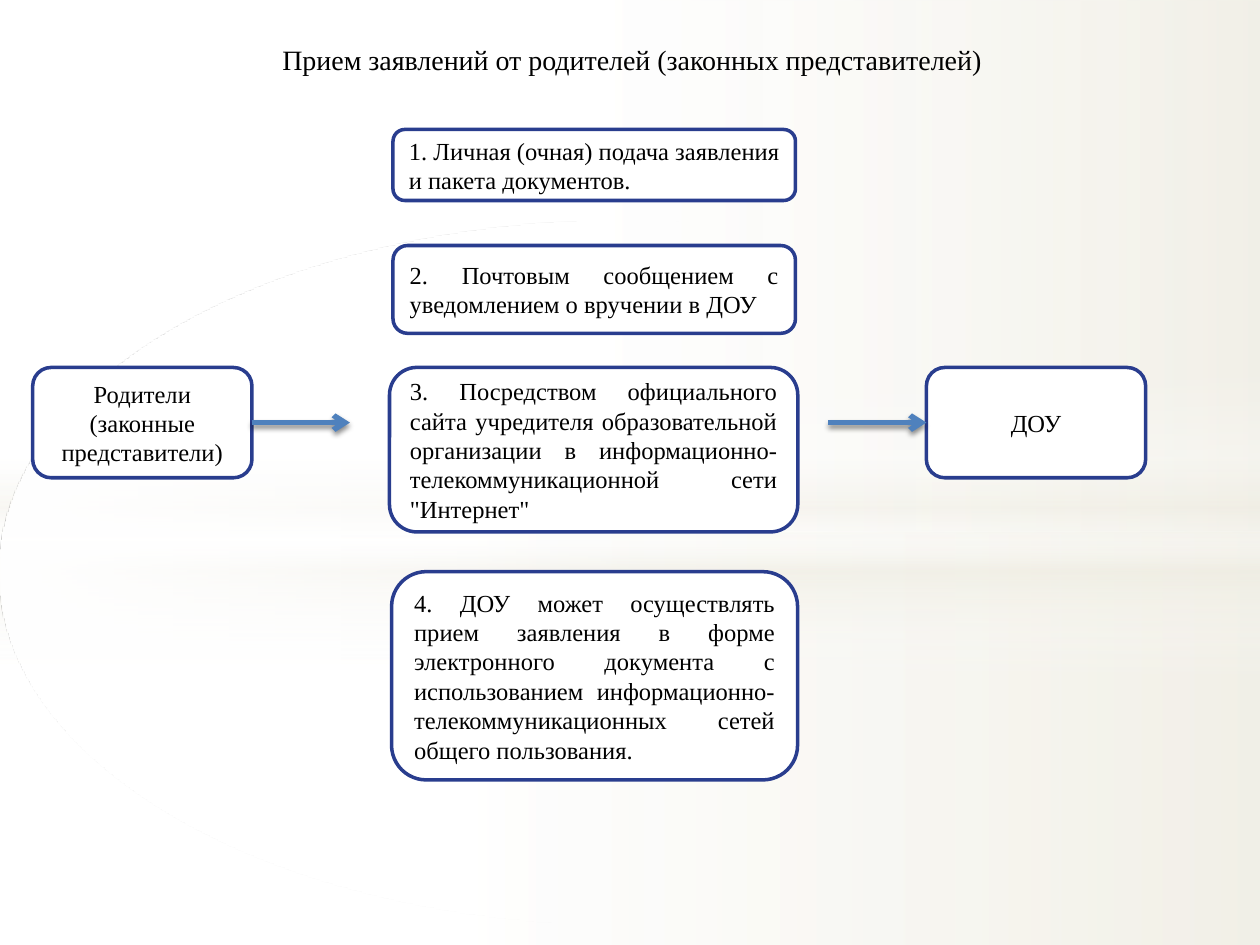
from lxml import etree
from pptx import Presentation
from pptx.dml.color import RGBColor
from pptx.enum.shapes import MSO_CONNECTOR, MSO_SHAPE
from pptx.enum.text import MSO_ANCHOR, PP_ALIGN
from pptx.oxml import parse_xml
from pptx.oxml.ns import nsdecls, qn
from pptx.util import Pt

RECTANGLE, OVAL, ROUNDED = MSO_SHAPE.RECTANGLE, MSO_SHAPE.OVAL, MSO_SHAPE.ROUNDED_RECTANGLE
STRAIGHT = MSO_CONNECTOR.STRAIGHT
MIDDLE = MSO_ANCHOR.MIDDLE
CENTER, JUSTIFY = PP_ALIGN.CENTER, PP_ALIGN.JUSTIFY
LEFT_SIDE, RIGHT_SIDE = 1, 3
FONT = "Times New Roman"
COLORS = {"white": "FFFFFF", "cream": "EEECE1", "border": "293D8E",
          "arrow": "4F81BD", "text": "000000"}


def color(name):
    return RGBColor.from_string(COLORS[name])


def write_text(shape, lines, size, alignment):
    frame = shape.text_frame
    frame.word_wrap = True
    for index, line in enumerate(lines):
        paragraph = frame.add_paragraph() if index else frame.paragraphs[0]
        paragraph.alignment = alignment
        run = paragraph.add_run()
        run.text = line
        for name, value in {"name": FONT, "size": Pt(size)}.items():
            setattr(run.font, name, value)
        run.font.color.rgb = color("text")


presentation = Presentation()
presentation.slide_width, presentation.slide_height = Pt(720), Pt(540)
slide = presentation.slides.add_slide(presentation.slide_layouts[6])
shapes = slide.shapes
slide.background.fill.solid()
slide.background.fill.fore_color.rgb = color("white")

# Background glow: kind, top, height, angle, stops of (position, colour, opacity)
glows = [
    (RECTANGLE, 304.5, 235.5, 0, [(0, "white", 91), (37, "white", 76), (100, "cream", 79)]),
    (RECTANGLE, 0, 304.5, 0, [(0, "white", 89), (48, "white", 62), (100, "cream", 79)]),
    (RECTANGLE, 209, 180, 90, [(0, "white", 0), (29, "white", 30), (45, "cream", 40),
                               (55, "white", 26), (65, "cream", 60), (100, "white", 0)]),
    (OVAL, 126, 402, 0, [(0, "white", 100), (54, "white", 0)]),
]
for kind, top, height, angle, stops in glows:
    shape = shapes.add_shape(kind, 0, Pt(top), Pt(720), Pt(height))
    shape.shadow.inherit = False
    shape.line.fill.background()
    stop_xml = "".join(
        f'<a:gs pos="{position * 1000}"><a:srgbClr val="{COLORS[name]}">'
        f'<a:alpha val="{opacity * 1000}"/></a:srgbClr></a:gs>'
        for position, name, opacity in stops)
    gradient = parse_xml(
        f'<a:gradFill {nsdecls("a")} rotWithShape="1"><a:gsLst>{stop_xml}</a:gsLst>'
        f'<a:lin ang="{angle * 60000}" scaled="0"/></a:gradFill>')
    shape._element.spPr.find(qn("a:prstGeom")).addnext(gradient)

# Title
title = shapes.add_textbox(Pt(20.2), Pt(21), Pt(686), Pt(26))
write_text(title, ["Прием заявлений от родителей (законных представителей) "], 16, CENTER)

# Boxes: sender, four ways of applying, recipient
boxes = [
    (18.7, 210, 125.3, 63, CENTER, ["Родители", "(законные представители)"]),
    (224.6, 74, 230, 40.6, JUSTIFY,
     ["1. Личная (очная) подача заявления и пакета документов. "]),
    (224.6, 140.3, 230, 50.2, JUSTIFY,
     ["2. Почтовым сообщением с уведомлением о вручении в ДОУ"]),
    (222.6, 210, 233.3, 94, JUSTIFY,
     ["3. Посредством официального сайта учредителя образовательной организации "
      "в информационно-телекоммуникационной сети \"Интернет\""]),
    (223.8, 326.7, 232, 119, JUSTIFY,
     ["4. ДОУ может осуществлять прием заявления в форме электронного документа "
      "с использованием информационно-телекоммуникационных сетей общего пользования."]),
    (529.4, 210, 125.3, 63, CENTER, ["ДОУ"]),
]
drawn = []
for left, top, width, height, alignment, lines in boxes:
    box = shapes.add_shape(ROUNDED, Pt(left), Pt(top), Pt(width), Pt(height))
    box.shadow.inherit = False
    box.fill.solid()
    box.fill.fore_color.rgb = color("white")
    box.line.color.rgb = color("border")
    box.line.width = Pt(2)
    box.text_frame.vertical_anchor = MIDDLE
    write_text(box, lines, 14, alignment)
    drawn.append(box)
sender, recipient = drawn[0], drawn[-1]

# Arrows out of the sender and into the recipient
arrow_y = Pt(241.5)
arrow_out = shapes.add_connector(STRAIGHT, Pt(144), arrow_y, Pt(200), arrow_y)
arrow_out.begin_connect(sender, RIGHT_SIDE)
arrow_in = shapes.add_connector(STRAIGHT, Pt(473.4), arrow_y, Pt(529.4), arrow_y)
arrow_in.end_connect(recipient, LEFT_SIDE)
for arrow in (arrow_out, arrow_in):
    arrow.line.color.rgb = color("arrow")
    arrow.line.width = Pt(3)
    etree.SubElement(arrow.line._get_or_add_ln(), qn("a:tailEnd"), type="arrow")
    arrow._element.spPr.append(parse_xml(
        f'<a:effectLst {nsdecls("a")}><a:outerShdw blurRad="{Pt(3.1)}" dist="{Pt(1.8)}" '
        f'dir="5400000" rotWithShape="0"><a:srgbClr val="{COLORS["text"]}">'
        '<a:alpha val="45000"/></a:srgbClr></a:outerShdw></a:effectLst>'))

presentation.save("out.pptx")
